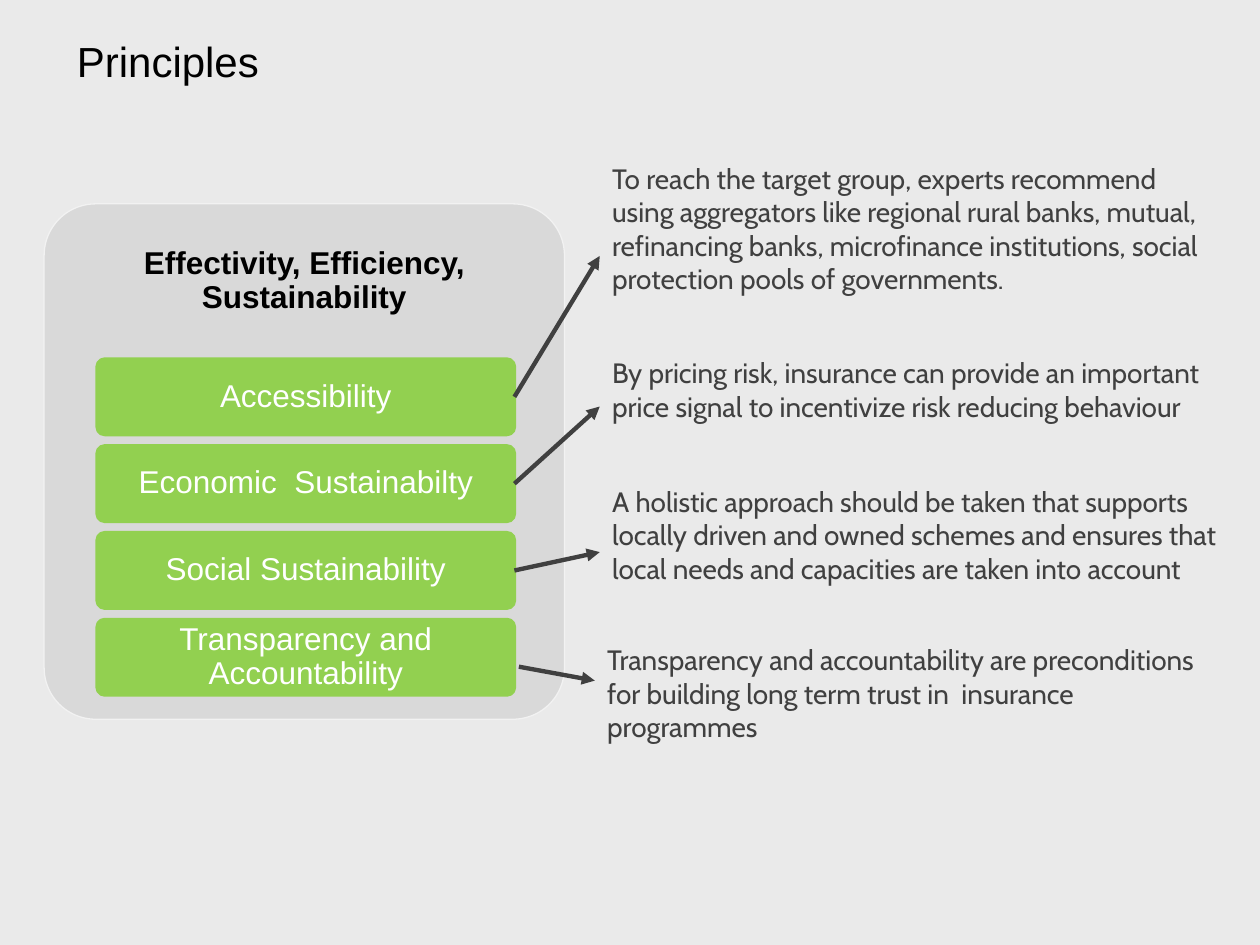
from dataclasses import dataclass
from typing import Optional

from lxml import etree
from pptx import Presentation
from pptx.dml.color import RGBColor
from pptx.enum import shapes, text
from pptx.oxml.ns import qn
from pptx.util import Cm, Pt


@dataclass(frozen=True)
class Theme:
    background: str = "EAEAEA"
    panel: str = "D9D9D9"
    panel_edge: str = "F2F2F2"
    tile: str = "92D050"
    tile_text: str = "FFFFFF"
    heading: str = "000000"
    note: str = "404040"
    heading_font: str = "Arial"
    note_font: str = "Cabin"
    title_size: int = 24
    label_size: int = 18
    note_size: int = 16


@dataclass(frozen=True)
class Box:
    """Left, top, width and height in centimetres."""
    left: float
    top: float
    width: float
    height: float

    def lengths(self) -> tuple:
        return Cm(self.left), Cm(self.top), Cm(self.width), Cm(self.height)


@dataclass(frozen=True)
class Principle:
    """A tile and its note; an arrow end left as None joins the box's side."""
    label: str
    note: str
    note_box: Box
    arrow_from: Optional[tuple] = None
    arrow_to: Optional[tuple] = None


THEME = Theme()
PANEL = Box(0.89, 4.11, 10.49, 10.39)
PANEL_HEADING = Box(PANEL.left, PANEL.top, PANEL.width, 3.12)
TILE = Box(1.96, 7.24, 8.41, 1.52)
TILE_PITCH = 1.75
NOTE_LEFT, NOTE_WIDTH = 12.09, 12.7

PRINCIPLES = [
    Principle(
        "Accessibility",
        "To reach the target group, experts recommend using aggregators like "
        "regional rural banks, mutual, refinancing banks, microfinance "
        "institutions, social protection pools of governments.",
        Box(NOTE_LEFT, 3.12, NOTE_WIDTH, 3.68),
        arrow_to=(NOTE_LEFT, 5.16)),
    Principle(
        "Economic  Sustainabilty",
        "By pricing risk, insurance can provide an important price signal to "
        "incentivize risk reducing behaviour",
        Box(NOTE_LEFT, 7.04, NOTE_WIDTH, 2.31)),
    Principle(
        "Social Sustainability",
        "A holistic approach should be taken that supports locally driven and "
        "owned schemes and ensures that local needs and capacities are taken "
        "into account",
        Box(NOTE_LEFT, 9.63, NOTE_WIDTH, 3.0)),
    Principle(
        "Transparency and Accountability",
        "Transparency and accountability are preconditions for building long "
        "term trust in  insurance programmes",
        Box(11.99, 12.83, NOTE_WIDTH, 2.31),
        arrow_from=(10.46, 13.44), arrow_to=(11.99, 13.72)),
]


def rgb(value: str) -> RGBColor:
    return RGBColor.from_string(value)


def write(shape, words: str, *, size: int, color: str, font: str,
          bold: bool = False, centered: bool = False,
          insets: tuple = (0.25, 0.13)) -> None:
    """Fill a shape with one paragraph; insets are horizontal, vertical in cm."""
    frame = shape.text_frame
    frame.word_wrap = True
    frame.margin_left = frame.margin_right = Cm(insets[0])
    frame.margin_top = frame.margin_bottom = Cm(insets[1])
    frame.vertical_anchor = (text.MSO_ANCHOR.MIDDLE if centered
                             else text.MSO_ANCHOR.TOP)
    paragraph = frame.paragraphs[0]
    paragraph.alignment = text.PP_ALIGN.CENTER if centered else text.PP_ALIGN.LEFT
    if centered:
        paragraph.line_spacing = 0.9
    run = paragraph.add_run()
    run.text = words
    run.font.size = Pt(size)
    run.font.name = font
    run.font.bold = bold
    run.font.color.rgb = rgb(color)


def add_rounded(slide, box: Box, fill: str, edge: str, edge_width: float):
    rounded = slide.shapes.add_shape(
        shapes.MSO_SHAPE.ROUNDED_RECTANGLE, *box.lengths())
    rounded.adjustments[0] = 0.1
    rounded.shadow.inherit = False
    rounded.fill.solid()
    rounded.fill.fore_color.rgb = rgb(fill)
    rounded.line.color.rgb = rgb(edge)
    rounded.line.width = Pt(edge_width)
    return rounded


def add_arrow(slide, principle: Principle, tile, note) -> None:
    start = principle.arrow_from or (0, 0)
    end = principle.arrow_to or (0, 0)
    arrow = slide.shapes.add_connector(
        shapes.MSO_CONNECTOR.STRAIGHT, *(Cm(value) for value in start + end))
    if principle.arrow_from is None:
        arrow.begin_connect(tile, 3)
    if principle.arrow_to is None:
        arrow.end_connect(note, 1)
    arrow.line.color.rgb = rgb(THEME.note)
    arrow.line.width = Pt(2.5)
    properties = arrow.element.spPr
    line = properties.find(qn("a:ln"))
    etree.SubElement(line, qn("a:tailEnd"), type="triangle")
    etree.SubElement(properties, qn("a:effectLst"))


def add_principle(slide, index: int, principle: Principle) -> None:
    tile_box = Box(TILE.left, TILE.top + index * TILE_PITCH,
                   TILE.width, TILE.height)
    tile = add_rounded(slide, tile_box, THEME.tile, THEME.tile, 2)
    write(tile, principle.label, size=THEME.label_size, color=THEME.tile_text,
          font=THEME.heading_font, centered=True, insets=(0.13, 0.1))
    note = slide.shapes.add_textbox(*principle.note_box.lengths())
    write(note, principle.note, size=THEME.note_size, color=THEME.note,
          font=THEME.note_font)
    add_arrow(slide, principle, tile, note)


def main() -> None:
    deck = Presentation()
    deck.slide_width, deck.slide_height = Cm(25.4), Cm(19.05)
    slide = deck.slides.add_slide(deck.slide_layouts[6])
    slide.background.fill.solid()
    slide.background.fill.fore_color.rgb = rgb(THEME.background)

    title = slide.shapes.add_textbox(*Box(1.3, 0.58, 5.99, 1.27).lengths())
    write(title, "Principles", size=THEME.title_size, color=THEME.heading,
          font=THEME.heading_font)

    add_rounded(slide, PANEL, THEME.panel, THEME.panel_edge, 0.75)
    heading = slide.shapes.add_textbox(*PANEL_HEADING.lengths())
    write(heading, "Effectivity, Efficiency, Sustainability",
          size=THEME.label_size, color=THEME.heading, font=THEME.heading_font,
          bold=True, centered=True, insets=(0.18, 0.18))

    for index, principle in enumerate(PRINCIPLES):
        add_principle(slide, index, principle)
    deck.save("out.pptx")


if __name__ == "__main__":
    main()
